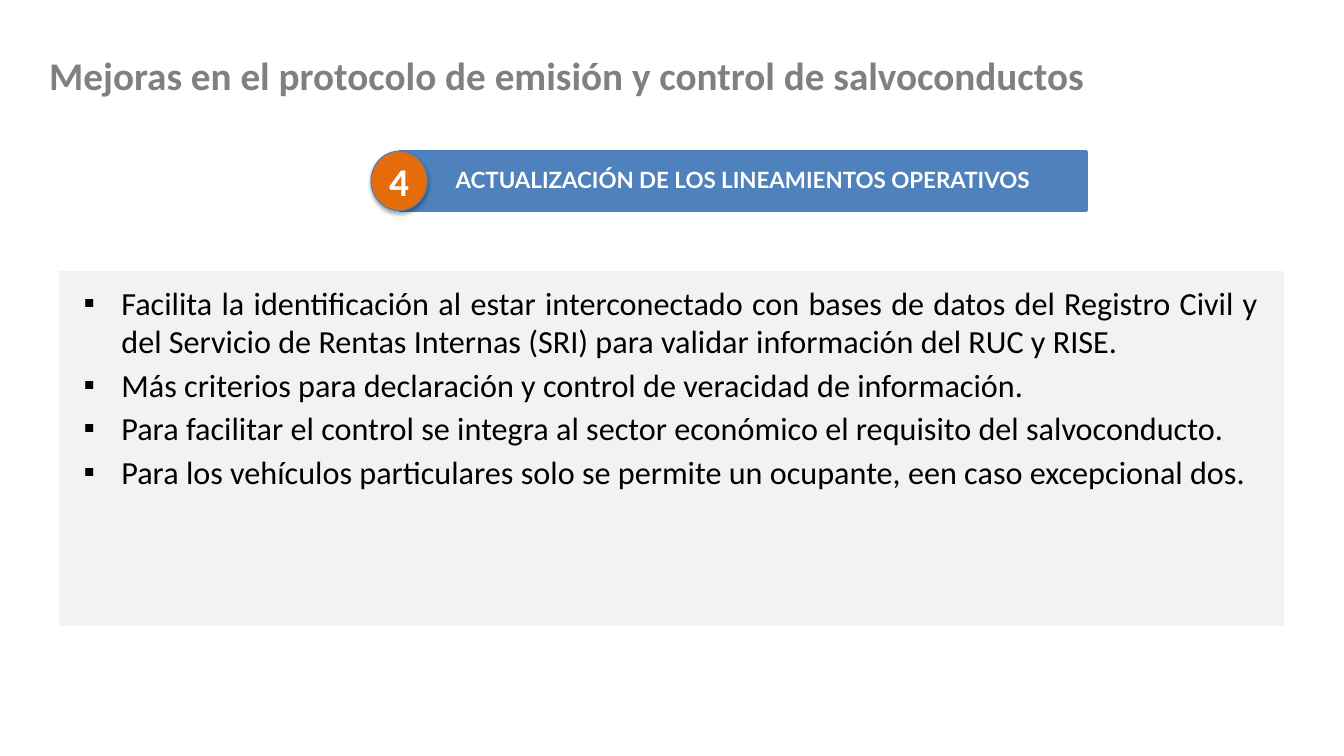
from dataclasses import dataclass

from lxml.etree import SubElement as Sub
from pptx import Presentation
from pptx.dml.color import RGBColor as Rgb
from pptx.enum.shapes import MSO_SHAPE as Kind
from pptx.enum.text import MSO_ANCHOR as Anchor, PP_ALIGN as Align
from pptx.oxml.ns import qn
from pptx.util import Cm, Pt


@dataclass(frozen=True)
class Theme:
    """Hold the colours, fonts and type sizes."""
    grey: str = "808080"
    pale: str = "F2F2F2"
    ink: str = "000000"
    white: str = "FFFFFF"
    blue: str = "4F81BD"
    edge: str = "4B7EBC"
    orange: str = "E46C0A"
    font: str = "Calibri"
    label: str = "Lato"
    large: float = 28
    body: float = 23
    small: float = 16


THEME = Theme()
TITLE = "Mejoras en el protocolo de emisión y control de salvoconductos"
BANNER = "ACTUALIZACIÓN DE LOS LINEAMIENTOS OPERATIVOS"
POINTS = [
    "Facilita la identificación al estar interconectado con bases de datos del "
    "Registro Civil y del Servicio de Rentas Internas (SRI) para validar "
    "información del RUC y RISE.",
    "Más criterios para declaración y control de veracidad de información.",
    "Para facilitar el control se integra al sector económico el requisito del "
    "salvoconducto.",
    "Para los vehículos particulares solo se permite un ocupante, een caso "
    "excepcional dos.",
]


def bullet(para, mark, indent):
    """Give a paragraph a hanging bullet."""
    props = para._p.get_or_add_pPr()
    props.set("marL", str(Cm(indent)))
    props.set("indent", str(-Cm(indent)))
    Sub(props, qn("a:buFont"), typeface="Arial")
    Sub(props, qn("a:buChar"), char=mark)


def write(shape, *lines, size, color, font=THEME.font, bold=False,
          align=Align.LEFT, anchor=Anchor.MIDDLE, pad=(0.25, 0.13),
          mark=None, after=0, leading=None):
    """Fill a shape with formatted paragraphs."""
    frame = shape.text_frame
    frame.word_wrap = True
    frame.vertical_anchor = anchor
    frame.margin_left = frame.margin_right = Cm(pad[0])
    frame.margin_top = frame.margin_bottom = Cm(pad[1])
    for i, line in enumerate(lines):
        para = frame.add_paragraph() if i else frame.paragraphs[0]
        if mark:
            bullet(para, mark, 0.95)
        para.alignment = align
        para.space_after = Pt(after)
        if leading:
            para.line_spacing = leading
        run = para.add_run()
        run.text = line
        run.font.name = font
        run.font.size = Pt(size)
        run.font.bold = bold
        run.font.color.rgb = Rgb.from_string(color)


def block(slide, kind, box, fill, line=None, width=0):
    """Draw a filled shape without a shadow."""
    shape = slide.shapes.add_shape(kind, *map(Cm, box))
    shape.shadow.inherit = False
    shape.fill.solid()
    shape.fill.fore_color.rgb = Rgb.from_string(fill)
    if line:
        shape.line.color.rgb = Rgb.from_string(line)
        shape.line.width = Pt(width)
    else:
        shape.line.fill.background()
    return shape


def shade(shape):
    """Cast a soft shadow below a shape."""
    effect = shape._element.spPr.find(qn("a:effectLst"))
    cast = Sub(effect, qn("a:outerShdw"), blurRad=str(Pt(3.1)),
               dist=str(Pt(1.8)), dir="5400000", rotWithShape="0")
    tone = Sub(cast, qn("a:srgbClr"), val=THEME.ink)
    Sub(tone, qn("a:alpha"), val="35000")


def title(slide, box):
    """Place the slide title."""
    write(slide.shapes.add_textbox(*map(Cm, box)), TITLE,
          size=THEME.large, color=THEME.grey, bold=True, pad=(0.3, 0.15))


def panel(slide, box):
    """Place the panel of bullet points."""
    write(block(slide, Kind.RECTANGLE, box, THEME.pale), *POINTS,
          size=THEME.body, color=THEME.ink, align=Align.JUSTIFY,
          anchor=Anchor.TOP, pad=(0.61, 0.3), mark="▪", after=3.45)


def banner(slide, box):
    """Place the banner with its number centred on the left edge."""
    left, top, _, high = box
    bar = block(slide, Kind.RECTANGLE, box, THEME.blue, THEME.blue, 2)
    write(bar, BANNER, size=THEME.small, color=THEME.white, font=THEME.label,
          bold=True, align=Align.CENTER, pad=(0.4, 0.23), leading=0.9)
    wide = 1.42
    disc = block(slide, Kind.OVAL, (left - wide / 2, top, wide, high),
                 THEME.orange, THEME.edge, 0.75)
    shade(disc)
    write(disc, "4", size=THEME.large, color=THEME.white, bold=True,
          align=Align.CENTER)


def main():
    """Build the slide and save it."""
    deck = Presentation()
    deck.slide_width, deck.slide_height = Cm(33.87), Cm(19.05)
    slide = deck.slides.add_slide(deck.slide_layouts[6])
    title(slide, (0.94, 0.81, 27.53, 2.13))
    panel(slide, (1.5, 6.83, 30.86, 8.94))
    banner(slide, (10.06, 3.81, 17.32, 1.5))
    deck.save("out.pptx")


if __name__ == "__main__":
    main()
